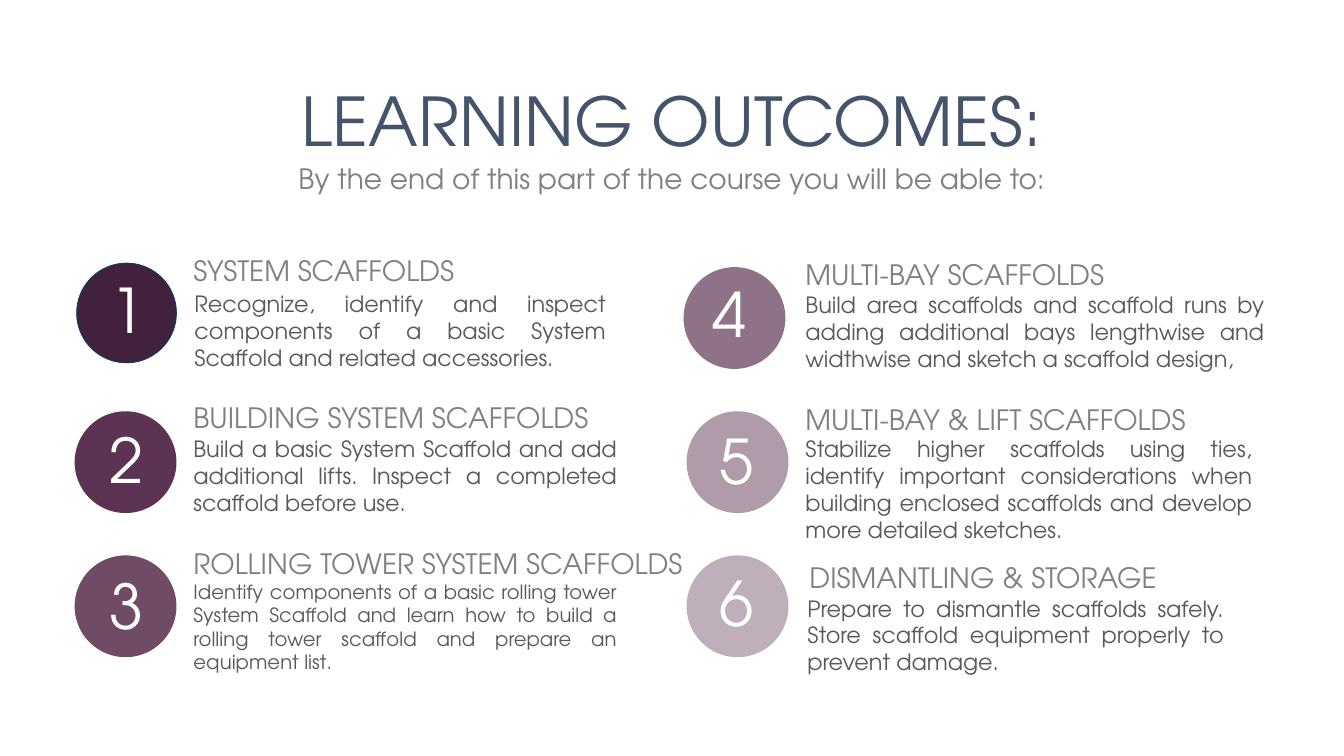
from dataclasses import dataclass
from typing import NamedTuple

import pptx
import pptx.dml.color
import pptx.enum.shapes
import pptx.enum.text
import pptx.util

SCALE = 9144  # EMU in one px, 100 px to the inch
ALIGN = pptx.enum.text.PP_ALIGN


@dataclass(frozen=True)
class Theme:
    font: str = "TeX Gyre Adventor"
    title: str = "44546A"
    label: str = "808080"
    body: str = "595959"
    digit: str = "FFFFFF"
    title_size: int = 48
    label_size: int = 20
    body_size: int = 16
    small_size: int = 14
    digit_size: int = 44


THEME = Theme()


class Box(NamedTuple):
    left: int
    top: int
    width: int
    height: int


class Style(NamedTuple):
    size: int
    color: str
    align: ALIGN = ALIGN.LEFT
    wrap: bool = True


TITLE = Style(THEME.title_size, THEME.title, ALIGN.CENTER, False)
INTRO = Style(THEME.label_size, THEME.label, ALIGN.CENTER, False)
HEAD = Style(THEME.label_size, THEME.label, wrap=False)
BODY = Style(THEME.body_size, THEME.body, ALIGN.JUSTIFY)
SMALL = Style(THEME.small_size, THEME.body, ALIGN.JUSTIFY)
DIGIT = Style(THEME.digit_size, THEME.digit)


@dataclass(frozen=True)
class Outcome:
    fill: str
    disc: Box
    digit: Box
    head: str
    head_box: Box
    body: str
    body_box: Box
    style: Style = BODY
    line: str = ""


OUTCOMES = [
    Outcome("42213D", Box(76, 261, 99, 99), Box(100, 265, 62, 84),
            "SYSTEM SCAFFOLDS", Box(182, 247, 282, 44),
            "Recognize, identify and inspect components of a basic System "
            "Scaffold and related accessories.",
            Box(183, 283, 428, 91), line="003F5F"),
    Outcome("5C3352", Box(74, 408, 101, 101), Box(99, 414, 62, 84),
            "BUILDING SYSTEM SCAFFOLDS", Box(182, 392, 416, 44),
            "Build a basic System Scaffold and add additional lifts. "
            "Inspect a completed scaffold before use.",
            Box(182, 427, 440, 91)),
    Outcome("6F4B65", Box(74, 551, 101, 101), Box(99, 558, 51, 158),
            "ROLLING TOWER SYSTEM SCAFFOLDS", Box(182, 537, 512, 44),
            "Identify components of a basic rolling tower System Scaffold and "
            "learn how to build a rolling tower scaffold and prepare an "
            "equipment list.",
            Box(182, 570, 440, 104), SMALL),
    Outcome("8E7287", Box(678, 265, 101, 101), Box(697, 269, 51, 158),
            "MULTI-BAY SCAFFOLDS", Box(789, 251, 323, 44),
            "Build area scaffolds and scaffold runs by adding additional bays "
            "lengthwise and widthwise and sketch a scaffold design,",
            Box(789, 284, 475, 91)),
    Outcome("AF9BAA", Box(681, 408, 101, 101), Box(704, 415, 51, 158),
            "MULTI-BAY & LIFT SCAFFOLDS", Box(789, 394, 400, 44),
            "Stabilize higher scaffolds using ties, identify important "
            "considerations when building enclosed scaffolds and develop more "
            "detailed sketches.",
            Box(789, 427, 463, 118)),
    Outcome("BFAFBB", Box(681, 551, 101, 101), Box(704, 556, 51, 158),
            "DISMANTLING & STORAGE", Box(793, 551, 369, 44),
            "Prepare to dismantle scaffolds safely. Store scaffold equipment "
            "properly to prevent damage.",
            Box(791, 585, 433, 91)),
]


def emu(box: Box) -> list[int]:
    return [side * SCALE for side in box]


def rgb(code: str) -> pptx.dml.color.RGBColor:
    return pptx.dml.color.RGBColor.from_string(code)


def add_text(shapes, box: Box, text: str, style: Style) -> None:
    frame = shapes.add_textbox(*emu(box)).text_frame
    frame.word_wrap = style.wrap
    para = frame.paragraphs[0]
    para.alignment = style.align
    run = para.add_run()
    run.text = text
    run.font.name = THEME.font
    run.font.size = pptx.util.Pt(style.size)
    run.font.color.rgb = rgb(style.color)


def add_disc(shapes, item: Outcome) -> None:
    disc = shapes.add_shape(pptx.enum.shapes.MSO_SHAPE.OVAL, *emu(item.disc))
    disc.shadow.inherit = False
    disc.fill.solid()
    disc.fill.fore_color.rgb = rgb(item.fill)
    if item.line:
        disc.line.color.rgb = rgb(item.line)
        disc.line.width = pptx.util.Pt(0.5)
    else:
        disc.line.fill.background()


def add_outcome(slide, number: int, item: Outcome) -> None:
    shapes = slide.shapes.add_group_shape().shapes
    add_disc(shapes, item)
    add_text(shapes, item.head_box, item.head, HEAD)
    add_text(shapes, item.body_box, item.body, item.style)
    add_text(shapes, item.digit, str(number), DIGIT)


def main() -> None:
    deck = pptx.Presentation()
    deck.slide_width = 1333 * SCALE
    deck.slide_height = 750 * SCALE
    slide = deck.slides.add_slide(deck.slide_layouts[6])
    add_text(slide.shapes, Box(283, 155, 767, 44),
             "By the end of this part of the course you will be able to:", INTRO)
    add_text(slide.shapes, Box(284, 74, 765, 91), "LEARNING OUTCOMES:", TITLE)
    for number, item in enumerate(OUTCOMES, 1):
        add_outcome(slide, number, item)
    deck.save("out.pptx")


if __name__ == "__main__":
    main()
